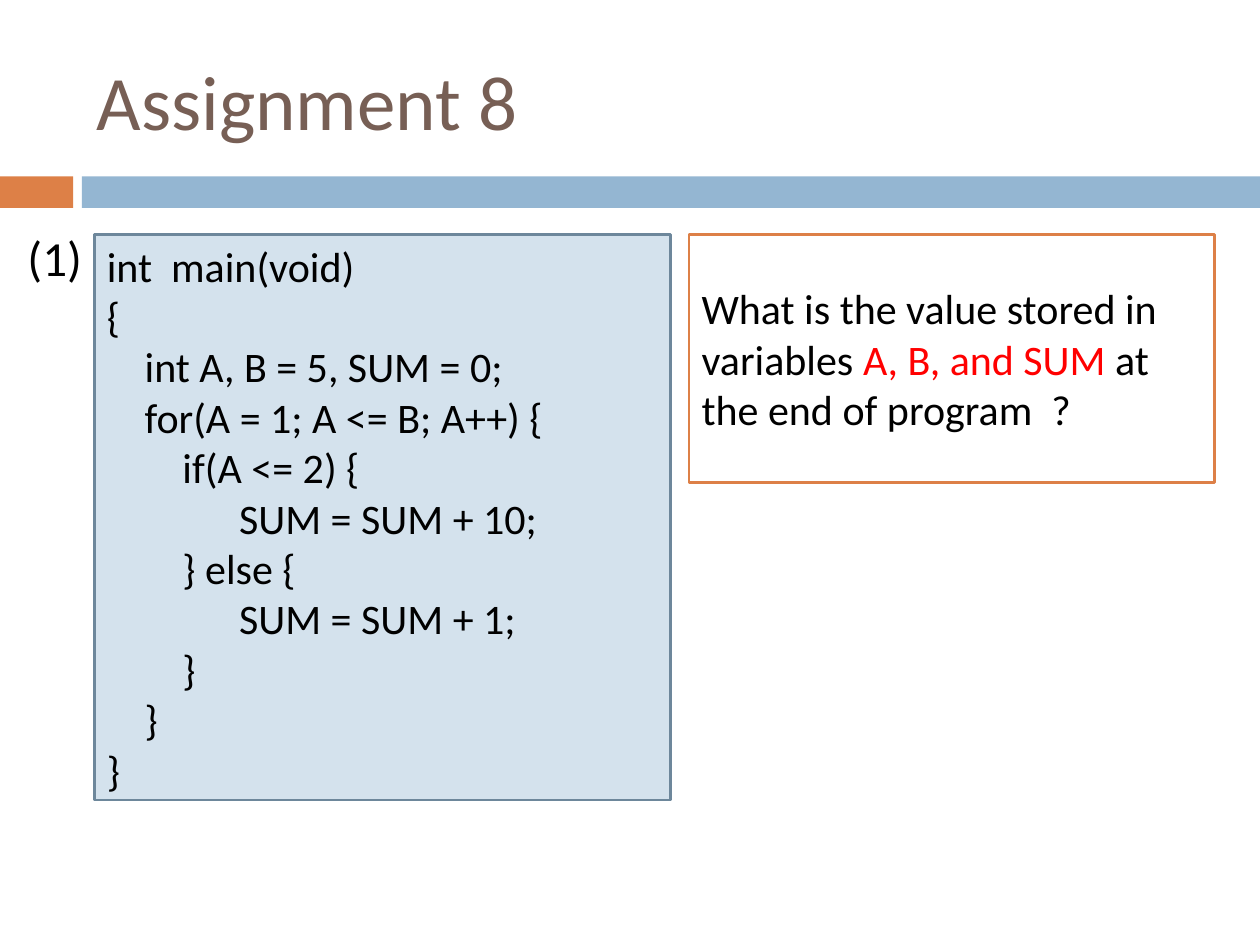
"""Build the Assignment 8 slide: a code listing beside a question."""
from dataclasses import dataclass

from pptx import Presentation
from pptx import util as u
from pptx.dml.color import RGBColor
from pptx.enum import shapes, text

FONT = "Calibri"
BLACK, RED, ORANGE, BLUE = "000000", "FF0000", "DD8047", "94B6D2"


@dataclass
class Span:
    words: str
    color: str = BLACK


@dataclass
class Line:
    spans: list[Span]
    indent: float = 0


@dataclass
class Box:
    left: float
    top: float
    width: float
    height: float
    fill: str
    border: str | None = None


def rgb(value: str) -> RGBColor:
    return RGBColor.from_string(value)


def write(shape, lines: list[Line], size: float, wrap: bool = True, anchor=text.MSO_ANCHOR.MIDDLE) -> None:
    frame = shape.text_frame
    frame.word_wrap = wrap
    frame.vertical_anchor = anchor
    for index, line in enumerate(lines):
        para = frame.add_paragraph() if index else frame.paragraphs[0]
        para.alignment = text.PP_ALIGN.LEFT
        para.font.name = FONT
        para.font.size = u.Pt(size)
        if line.indent:
            para._p.get_or_add_pPr().set("marL", str(u.Inches(line.indent)))
        for span in line.spans:
            run = para.add_run()
            run.text = span.words
            run.font.color.rgb = rgb(span.color)


def add_box(page, box: Box):
    position = map(u.Inches, (box.left, box.top, box.width, box.height))
    shape = page.shapes.add_shape(shapes.MSO_SHAPE.RECTANGLE, *position)
    shape.shadow.inherit = False
    shape.fill.solid()
    shape.fill.fore_color.rgb = rgb(box.fill)
    if box.border:
        shape.line.color.rgb = rgb(box.border)
        shape.line.width = u.Pt(1.5)
    else:
        shape.line.fill.background()
    return shape


def add_label(page, left: float, top: float, width: float, height: float):
    return page.shapes.add_textbox(*map(u.Inches, (left, top, width, height)))


BANDS = [Box(0, 1.4, 0.58, 0.25, ORANGE), Box(0.65, 1.4, 9.35, 0.25, BLUE)]
CODE_BOX = Box(0.75, 1.86, 4.57, 4.49, "D4E2ED", "6D879B")
QUESTION_BOX = Box(5.47, 1.86, 4.17, 1.97, "FFFFFF", ORANGE)
OUTER, INNER, BODY = 0.3, 0.6, 1.05
CODE = [
    (0, "int  main(void)"),
    (0, "{"),
    (OUTER, "int A, B = 5, SUM = 0;"),
    (OUTER, "for(A = 1; A <= B; A++) {"),
    (INNER, "if(A <= 2) {"),
    (BODY, "SUM = SUM + 10;"),
    (INNER, "} else {"),
    (BODY, "SUM = SUM + 1;"),
    (INNER, "}"),
    (OUTER, "}"),
    (0, "}"),
]
QUESTION = Line([
    Span("What is the value stored in variables "),
    Span("A, B, and SUM", RED),
    Span(" at the end of program  ?"),
])


def main() -> None:
    deck = Presentation()
    deck.slide_width, deck.slide_height = u.Inches(10), u.Inches(7.5)
    page = deck.slides.add_slide(deck.slide_layouts[6])
    for band in BANDS:
        add_box(page, band)
    title = add_label(page, 0.67, 0.25, 8.92, 1.08)
    write(title, [Line([Span("Assignment 8", "775F55")])], 44)
    code_lines = [Line([Span(words)], indent) for indent, words in CODE]
    write(add_box(page, CODE_BOX), code_lines, 24)
    write(add_box(page, QUESTION_BOX), [QUESTION], 24)
    number = add_label(page, 0.12, 1.76, 0.63, 0.57)
    write(number, [Line([Span("(1)")])], 28, wrap=False, anchor=text.MSO_ANCHOR.TOP)
    deck.save("out.pptx")


if __name__ == "__main__":
    main()
